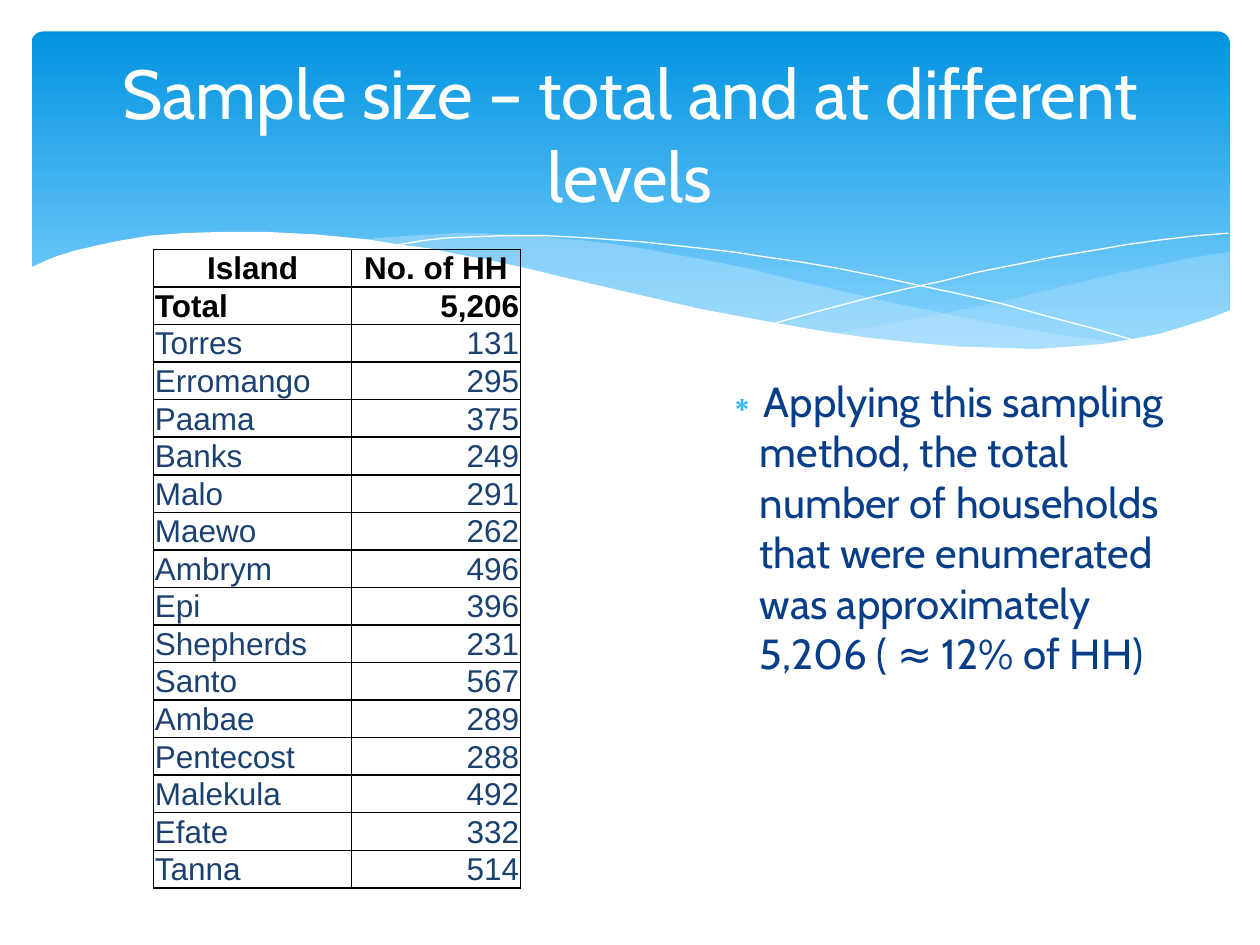
from lxml import etree
from pptx import Presentation
from pptx.dml.color import RGBColor
from pptx.enum.shapes import MSO_SHAPE as Preset
from pptx.enum.text import MSO_ANCHOR as Anchor, MSO_AUTO_SIZE as AutoSize, PP_ALIGN as Align
from pptx.oxml.ns import qn
from pptx.util import Inches, Pt

COLORS = {
    "sky_top": "0293E0", "sky_bottom": "83D3FE", "wave": "C6E7FC",
    "white": "FFFFFF", "black": "000000",
    "body": "073E87", "bullet": "31B6FD", "island": "1B4171",
}
HEADING_FONT, TABLE_FONT = "Cabin", "Arial"

# Wave outlines, as (x, y) in inches
RIGHT_WAVE = [
    (9.76, 2), (9.48, 2.04), (9.21, 2.1), (8.91, 2.16), (8.61, 2.23), (8.05, 2.37),
    (7.53, 2.48), (7.06, 2.57), (6.61, 2.65), (6.91, 2.69), (7.19, 2.72), (7.45, 2.75),
    (7.69, 2.77), (8.03, 2.78), (8.35, 2.77), (8.63, 2.75), (8.89, 2.72), (9.13, 2.67),
    (9.35, 2.62), (9.49, 2.57), (9.63, 2.52), (9.76, 2.47),
]
LONG_WAVE = [
    (8.93, 2.73), (8.66, 2.69), (8.37, 2.65), (8.07, 2.6), (7.75, 2.54), (7.41, 2.47),
    (7.06, 2.4), (6.68, 2.31), (6.29, 2.22), (5.98, 2.14), (5.69, 2.08), (5.41, 2.03),
    (5.14, 1.98), (4.89, 1.94), (4.65, 1.91), (4.42, 1.89), (4.2, 1.87), (3.99, 1.86),
    (3.8, 1.85), (3.61, 1.85), (3.28, 1.87), (2.99, 1.89), (2.86, 1.91), (3.23, 1.96),
    (3.62, 2.03), (4.04, 2.11), (4.49, 2.22), (4.91, 2.32), (5.3, 2.4), (5.66, 2.48),
    (6.01, 2.55), (6.34, 2.61), (6.65, 2.66), (6.95, 2.7), (7.22, 2.74), (7.48, 2.76),
    (7.73, 2.77), (7.96, 2.78), (8.28, 2.78), (8.57, 2.77), (8.76, 2.75),
]
FALLING_LINE = [
    (3.09, 1.95), (3.18, 1.94), (3.35, 1.91), (3.53, 1.89), (3.74, 1.88), (4.01, 1.87),
    (4.33, 1.87), (4.69, 1.89), (5.1, 1.92), (5.56, 1.97), (5.82, 2), (6.08, 2.04),
    (6.36, 2.08), (6.65, 2.13), (6.95, 2.19), (7.27, 2.26), (7.6, 2.33), (7.95, 2.41),
    (8.31, 2.51), (8.69, 2.61), (9.07, 2.72),
]
RISING_LINE = [
    (6.13, 2.57), (6.53, 2.46), (6.95, 2.35), (7.2, 2.29), (7.48, 2.23), (7.76, 2.16),
    (8.06, 2.1), (8.36, 2.04), (8.66, 1.99), (8.95, 1.94), (9.24, 1.9), (9.51, 1.87),
    (9.75, 1.85),
]
WHITE_FRONT = [
    (9.77, 2.46), (9.59, 2.53), (9.4, 2.59), (9.2, 2.65), (8.99, 2.69), (8.75, 2.73),
    (8.5, 2.75), (8.23, 2.77), (7.93, 2.76), (7.61, 2.75), (7.26, 2.72), (6.88, 2.68),
    (6.48, 2.62), (6.03, 2.54), (5.55, 2.45), (5.03, 2.33), (4.47, 2.2), (4.18, 2.13),
    (3.91, 2.07), (3.65, 2.02), (3.4, 1.97), (3.16, 1.94), (2.92, 1.9), (2.71, 1.88),
    (2.5, 1.86), (2.3, 1.85), (2.11, 1.84), (1.77, 1.84), (1.46, 1.85), (1.19, 1.87),
    (0.95, 1.91), (0.76, 1.95), (0.59, 1.99), (0.46, 2.03), (0.36, 2.07), (0.23, 2.13),
    (0.23, 3.29), (9.77, 3.29),
]

HOUSEHOLDS = [
    ("Island", "No. of HH"), ("Total", "5,206"), ("Torres", "131"), ("Erromango", "295"),
    ("Paama", "375"), ("Banks", "249"), ("Malo", "291"), ("Maewo", "262"),
    ("Ambrym", "496"), ("Epi", "396"), ("Shepherds", "231"), ("Santo", "567"),
    ("Ambae", "289"), ("Pentecost", "288"), ("Malekula", "492"), ("Efate", "332"),
    ("Tanna", "514"),
]


def rgb(name):
    return RGBColor.from_string(COLORS[name])


def style_text(paragraph, font_name, size, color, bold=False):
    for run in paragraph.runs:
        font = run.font
        font.name, font.size, font.bold = font_name, Pt(size), bold
        font.color.rgb = rgb(color)


def place(shape, box):
    shape.left, shape.top, shape.width, shape.height = map(Inches, box)


def add_wave(slide, points, fill=None, opacity=100):
    """Draw a filled wave, or an open white hairline when no fill is given."""
    outline = [(Inches(x), Inches(y)) for x, y in points]
    builder = slide.shapes.build_freeform(*outline[0], scale=1.0)
    builder.add_line_segments(outline[1:], close=fill is not None)
    wave = builder.convert_to_shape()
    wave.shadow.inherit = False
    if fill is None:
        wave.fill.background()
        wave.line.color.rgb = rgb("white")
        wave.line.width = Pt(0)
        return
    wave.line.fill.background()
    wave.fill.solid()
    wave.fill.fore_color.rgb = rgb(fill)
    if opacity < 100:
        color = wave.element.spPr.find(f"{qn('a:solidFill')}/{qn('a:srgbClr')}")
        etree.SubElement(color, qn("a:alpha"), val=str(opacity * 1000))


def add_banner(slide, box):
    sky = slide.shapes.add_shape(Preset.ROUNDED_RECTANGLE, *map(Inches, box))
    sky.adjustments[0] = 0.034
    sky.shadow.inherit = False
    sky.line.fill.background()
    sky.fill.gradient()
    sky.fill.gradient_angle = 270
    stops = [("sky_top", 0), ("sky_bottom", 0.9)]
    for stop, (color, position) in zip(sky.fill.gradient_stops, stops):
        stop.color.rgb = rgb(color)
        stop.position = position
    add_wave(slide, RIGHT_WAVE, "wave", 29)
    add_wave(slide, LONG_WAVE, "wave", 40)
    add_wave(slide, FALLING_LINE)
    add_wave(slide, RISING_LINE)
    add_wave(slide, WHITE_FRONT, "white")


def fill_placeholder(placeholder, box, text, anchor):
    """Bring the placeholder in front of the banner and set its text."""
    placeholder.element.getparent().append(placeholder.element)
    place(placeholder, box)
    frame = placeholder.text_frame
    frame.text = text
    frame.word_wrap = True
    frame.auto_size = AutoSize.NONE
    frame.vertical_anchor = anchor
    return frame.paragraphs[0]


def add_title(slide, box):
    heading = fill_placeholder(slide.shapes.title, box,
                               "Sample size – total and at different levels", Anchor.MIDDLE)
    heading.alignment = Align.CENTER
    style_text(heading, HEADING_FONT, 39.6, "white")


def add_finding(slide, box):
    finding = fill_placeholder(
        slide.placeholders[1], box,
        "Applying this sampling method, the total number of households that were "
        "enumerated was approximately 5,206 ( ≈ 12% of HH)", Anchor.TOP)
    style_text(finding, HEADING_FONT, 24, "body")
    finding.space_before = Pt(4.8)
    # Hanging bullet
    props = finding._p.get_or_add_pPr()
    props.set("marL", str(Inches(0.3)))
    props.set("indent", str(Inches(-0.3)))
    bullet_color = etree.SubElement(props, qn("a:buClr"))
    etree.SubElement(bullet_color, qn("a:srgbClr"), val=COLORS["bullet"])
    etree.SubElement(props, qn("a:buChar"), char="∗")


def add_borders(cell):
    props = cell._tc.get_or_add_tcPr()
    for index, side in enumerate(("lnL", "lnR", "lnT", "lnB")):
        border = etree.Element(qn(f"a:{side}"), w=str(Pt(1)))
        fill = etree.SubElement(border, qn("a:solidFill"))
        etree.SubElement(fill, qn("a:srgbClr"), val=COLORS["black"])
        props.insert(index, border)


def add_household_table(slide, box):
    frame = slide.shapes.add_table(len(HOUSEHOLDS), 2, *map(Inches, box))
    table = frame.table
    table.first_row = table.horz_banding = False
    for column, width in zip(table.columns, (1.57, 1.34)):
        column.width = Inches(width)
    for row_index, row in enumerate(HOUSEHOLDS):
        bold = row_index < 2
        for cell, text, side in zip(table.rows[row_index].cells, row, (Align.LEFT, Align.RIGHT)):
            cell.text = text
            cell.vertical_anchor = Anchor.MIDDLE
            cell.margin_left = cell.margin_right = cell.margin_top = Inches(0.01)
            cell.margin_bottom = 0
            cell.fill.background()
            add_borders(cell)
            entry = cell.text_frame.paragraphs[0]
            entry.alignment = Align.CENTER if row_index == 0 else side
            style_text(entry, TABLE_FONT, 18, "black" if bold else "island", bold)


def main():
    deck = Presentation()
    deck.slide_width, deck.slide_height = Inches(10), Inches(7.5)
    slide = deck.slides.add_slide(deck.slide_layouts[1])
    add_banner(slide, (0.25, 0.25, 9.51, 2.7))
    add_finding(slide, (5.63, 2.93, 4.02, 3.77))
    add_title(slide, (0.5, 0.37, 9, 1.37))
    add_household_table(slide, (1.22, 1.98, 2.91, 5.07))
    deck.save("out.pptx")


if __name__ == "__main__":
    main()
